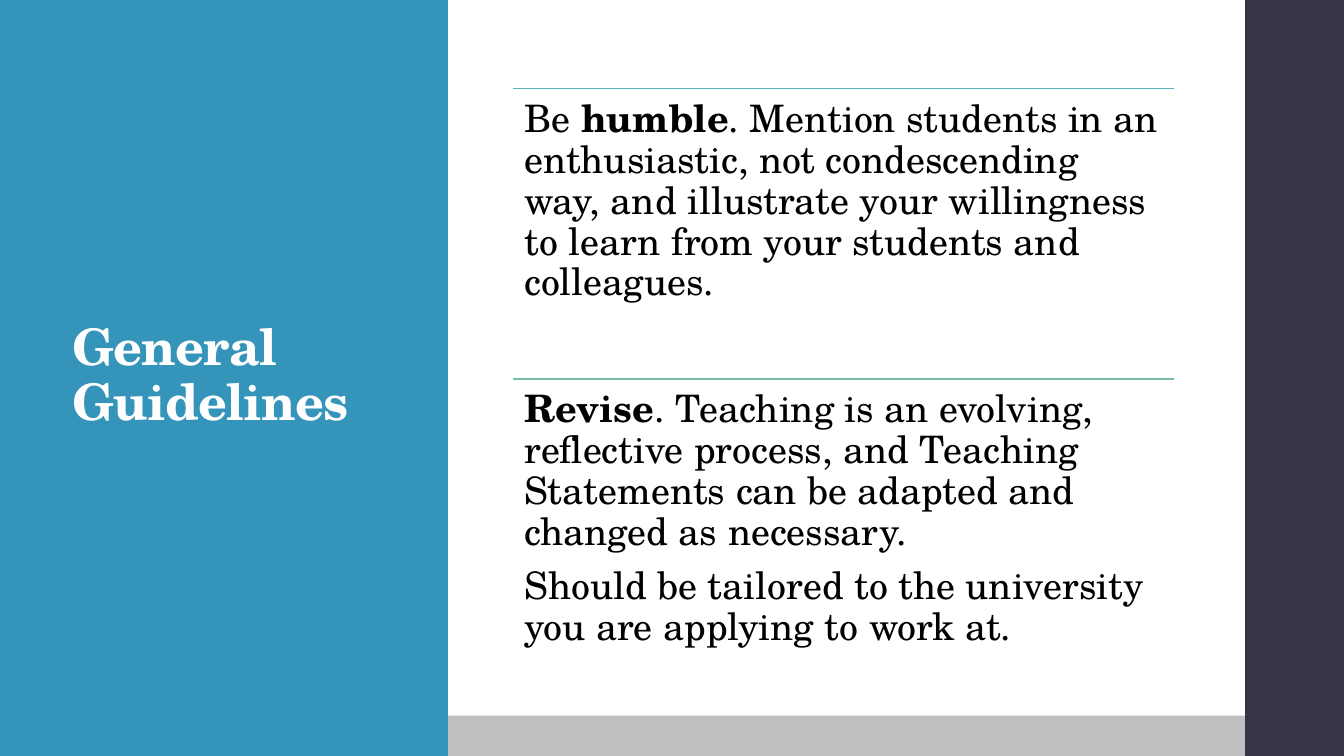
from lxml import etree
from pptx import Presentation
from pptx import util as u
from pptx.dml.color import RGBColor
from pptx.enum import shapes, text
from pptx.oxml.ns import qn

WIDTH, HEIGHT = 13.33, 7.5
FONT = "TeX Gyre Schola"
COLORS = {
    "title_panel": "3494BA",
    "side_band": "373545",
    "footer": "BFBFBF",
    "title": "FFFFFF",
    "body": "000000",
    "first_rule": "58B6C0",
    "second_rule": "75BDA7",
}
LEFT, TOP = 5.09, 0.88
COLUMN_WIDTH, ROW_HEIGHT = 6.55, 2.88
GUIDELINES = [
    ("first_rule", [
        [("Be ", False), ("humble", True),
         (". Mention students in an enthusiastic, not condescending way, and "
          "illustrate your willingness to learn from your students and "
          "colleagues.", False)],
    ]),
    ("second_rule", [
        [("Revise", True),
         (". Teaching is an evolving, reflective process, and Teaching "
          "Statements can be adapted and changed as necessary.", False)],
        [("Should be tailored to the university you are applying to work at.",
          False)],
    ]),
]


def color(name):
    return RGBColor.from_string(COLORS[name])


def add_panel(page, name, *place):
    panel = page.shapes.add_shape(
        shapes.MSO_SHAPE.RECTANGLE, *map(u.Inches, place))
    panel.shadow.inherit = False
    panel.fill.solid()
    panel.fill.fore_color.rgb = color(name)
    panel.line.fill.background()


def add_rule(page, name, top):
    rule = page.shapes.add_connector(
        shapes.MSO_CONNECTOR.STRAIGHT, u.Inches(LEFT), u.Inches(top),
        u.Inches(LEFT + COLUMN_WIDTH), u.Inches(top))
    rule.line.color.rgb = color(name)
    rule.line.width = u.Pt(1.1)
    etree.SubElement(rule._element.spPr, qn("a:effectLst"))


def add_text(page, place, insets, paragraphs, size, name,
             anchor=text.MSO_ANCHOR.TOP, after=0, tracking=0):
    box = page.shapes.add_textbox(*map(u.Inches, place))
    frame = box.text_frame
    frame.word_wrap = True
    frame.vertical_anchor = anchor
    (frame.margin_left, frame.margin_top,
     frame.margin_right, frame.margin_bottom) = map(u.Inches, insets)
    for index, runs in enumerate(paragraphs):
        para = frame.add_paragraph() if index else frame.paragraphs[0]
        para.line_spacing = 0.9
        para.space_after = u.Pt(after)
        for words, bold in runs:
            span = para.add_run()
            span.text = words
            span.font.name = FONT
            span.font.size = u.Pt(size)
            span.font.bold = bold
            span.font.color.rgb = color(name)
            if tracking:
                span._r.get_or_add_rPr().set("spc", str(int(tracking * 100)))


def main():
    deck = Presentation()
    deck.slide_width, deck.slide_height = u.Inches(WIDTH), u.Inches(HEIGHT)
    page = deck.slides.add_slide(deck.slide_layouts[6])

    add_panel(page, "footer", 0, 7.1, WIDTH, HEIGHT - 7.1)
    add_panel(page, "title_panel", 0, 0, WIDTH / 3, HEIGHT)
    add_text(page, (0.62, 0.91, 2.97, 5.67), (0.1, 0.03, 0.1, 0.05),
             [[("General Guidelines", True)]], 36, "title",
             anchor=text.MSO_ANCHOR.MIDDLE, tracking=-0.5)
    add_panel(page, "side_band", 12.35, 0, WIDTH - 12.35, HEIGHT)

    for row, (rule, paragraphs) in enumerate(GUIDELINES):
        top = TOP + row * ROW_HEIGHT
        add_rule(page, rule, top)
        add_text(page, (LEFT, top, COLUMN_WIDTH, ROW_HEIGHT), [0.11] * 4,
                 paragraphs, 27, "body", after=9.5)

    deck.save("out.pptx")


if __name__ == "__main__":
    main()
